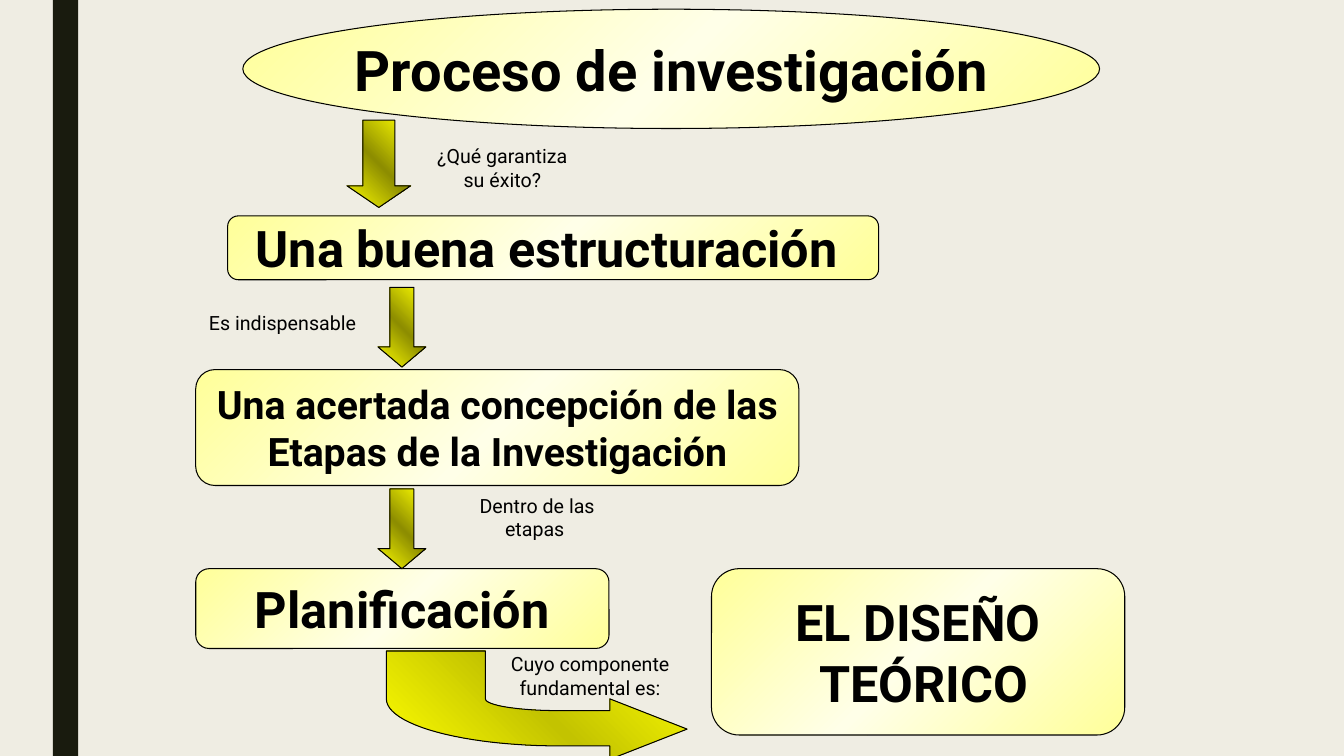
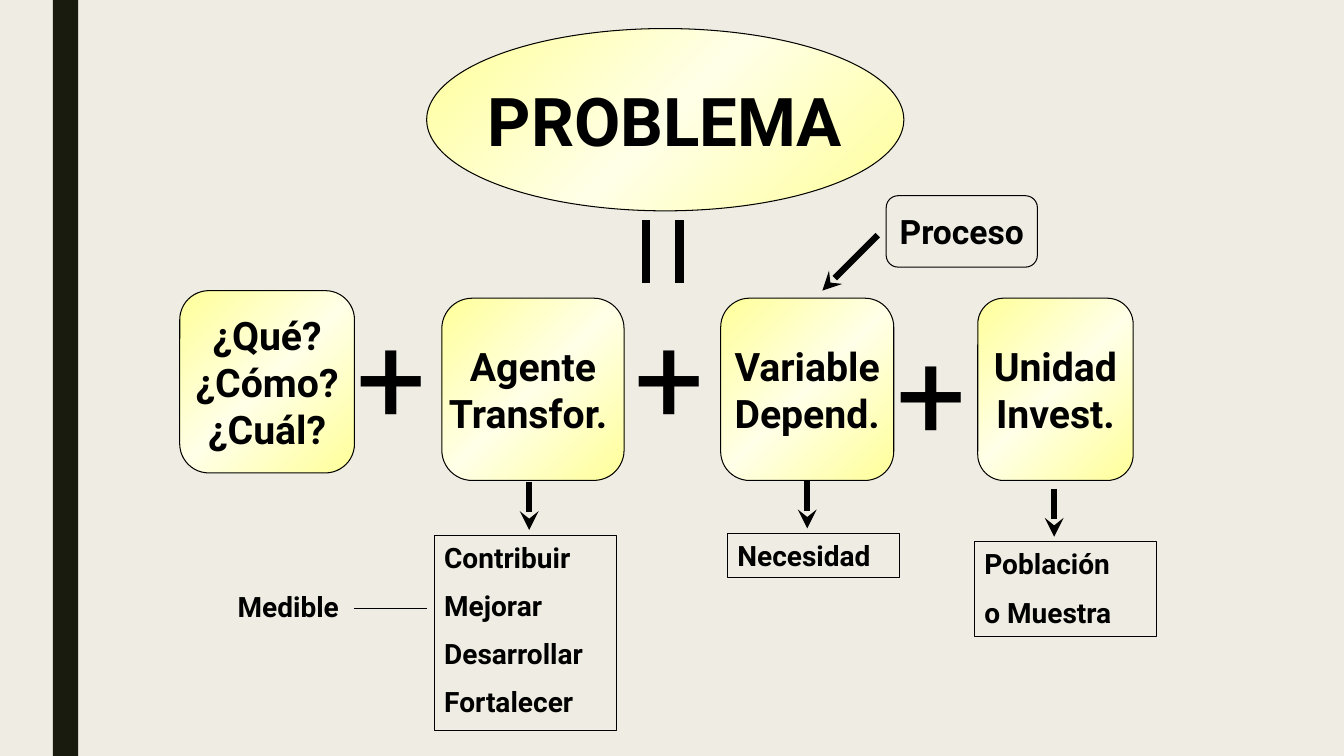
"""Build two concept maps about the research process and the research problem."""
from copy import deepcopy
from math import cos, pi, sin

from lxml import etree
from pptx import Presentation
from pptx.dml.color import RGBColor
from pptx.enum.shapes import MSO_CONNECTOR, MSO_SHAPE
from pptx.enum.text import MSO_ANCHOR, PP_ALIGN
from pptx.oxml.ns import qn
from pptx.util import Inches, Pt

STRAIGHT = MSO_CONNECTOR.STRAIGHT
ELLIPSE, ROUNDED = MSO_SHAPE.OVAL, MSO_SHAPE.ROUNDED_RECTANGLE
RECTANGLE, DOWN_ARROW = MSO_SHAPE.RECTANGLE, MSO_SHAPE.DOWN_ARROW
TOP, MIDDLE = MSO_ANCHOR.TOP, MSO_ANCHOR.MIDDLE
LEFT, CENTER = PP_ALIGN.LEFT, PP_ALIGN.CENTER

FONT = "Roboto"
COLORS = {"paper": "EFEDE3", "band": "191B0E", "ink": "000000", "cream": "FFFF99",
          "glow": "FFFFE8", "yellow": "FFFF00", "olive": "8D8D00", "moss": "C3C300"}
GRADIENTS = {"card": ("cream", "glow", 315), "arrow": ("yellow", "olive", 45),
             "bend": ("yellow", "moss", 45)}
COLUMNS, ROWS = 160, 90


def color(name):
    """Return the named colour."""
    return RGBColor.from_string(COLORS[name])


class Board:
    """Hold the deck's style and current slide, measured on a grid of columns and rows."""

    def __init__(self):
        """Start a widescreen deck with a plain background."""
        self.deck = Presentation()
        self.deck.slide_width, self.deck.slide_height = Inches(13.33), Inches(7.5)
        background = self.deck.slide_master.background.fill
        background.solid()
        background.fore_color.rgb = color("paper")
        self.shapes = None

    def x(self, column):
        """Convert columns to a length."""
        return round(self.deck.slide_width * column / COLUMNS)

    def y(self, row):
        """Convert rows to a length."""
        return round(self.deck.slide_height * row / ROWS)

    def place(self, at):
        """Convert left, top, width and height to lengths."""
        left, top, width, height = at
        return self.x(left), self.y(top), self.x(width), self.y(height)

    def page(self):
        """Add a blank page with the dark side band."""
        self.shapes = self.deck.slides.add_slide(self.deck.slide_layouts[6]).shapes
        band = self.shapes.add_shape(RECTANGLE, *self.place((6.3, 0, 3, ROWS)))
        band.shadow.inherit = False
        band.fill.solid()
        band.fill.fore_color.rgb = color("band")
        band.line.fill.background()

    def paint(self, shape, gradient=None):
        """Give a shape a thin outline and an optional mirrored gradient."""
        shape.shadow.inherit = False
        shape.line.color.rgb = color("ink")
        shape.line.width = Pt(0.75)
        if gradient is None:
            shape.fill.background()
            return
        edge, middle, angle = GRADIENTS[gradient]
        shape.fill.gradient()
        shape.fill.gradient_angle = angle
        stop_list = shape._element.spPr.find(".//" + qn("a:gsLst"))
        stop_list.append(deepcopy(stop_list[0]))
        for index, (stop, name) in enumerate(zip(shape.fill.gradient_stops, (edge, middle, edge))):
            stop.position = index / 2
            stop.color.rgb = color(name)

    def set_text(self, shape, lines, size, bold=True, align=CENTER, anchor=MIDDLE, wrap=False, gap=0):
        """Put one paragraph per line into a shape."""
        frame = shape.text_frame
        frame.word_wrap = wrap
        frame.vertical_anchor = anchor
        for index, line in enumerate(lines):
            para = frame.add_paragraph() if index else frame.paragraphs[0]
            para.alignment = align
            if index and gap:
                para.space_before = Pt(gap)
            span = para.add_run()
            span.text = line
            span.font.name, span.font.size, span.font.bold = FONT, Pt(size), bold
            span.font.color.rgb = color("ink")

    def card(self, at, lines, size, kind=ROUNDED, gradient="card", wrap=False):
        """Add an outlined shape with centred bold text."""
        box = self.shapes.add_shape(kind, *self.place(at))
        self.paint(box, gradient)
        self.set_text(box, lines, size, wrap=wrap)

    def examples(self, at, lines):
        """Add an outlined list of examples."""
        box = self.shapes.add_shape(RECTANGLE, *self.place(at))
        self.paint(box)
        self.set_text(box, lines, 20, align=LEFT, anchor=TOP, wrap=True, gap=10.5)

    def label(self, at, lines, size=14, **style):
        """Add free text."""
        box = self.shapes.add_textbox(*self.place(at))
        self.set_text(box, lines, size, **style)

    def down_arrow(self, at, head):
        """Add a block arrow pointing down."""
        arrow = self.shapes.add_shape(DOWN_ARROW, *self.place(at))
        arrow.adjustments[1] = head
        self.paint(arrow, "arrow")

    def bent_arrow(self, center, outer, inner, top, head):
        """Add a block arrow that curves from down to right around a centre."""
        def arc(radii, angles):
            return [(center[0] - radii[0] * cos(a), center[1] + radii[1] * sin(a)) for a in angles]

        quarter = [step * pi / 48 for step in range(25)]
        tip, neck, head_top, head_bottom = head
        outline = [tip, (neck, head_bottom), (neck, center[1] + outer[1])]
        outline += arc(outer, reversed(quarter))
        outline += [(center[0] - outer[0], top), (center[0] - inner[0], top)]
        outline += arc(inner, quarter)
        outline += [(neck, center[1] + inner[1]), (neck, head_top)]
        points = [(self.x(column), self.y(row)) for column, row in outline]
        builder = self.shapes.build_freeform(*points[0], scale=1.0)
        builder.add_line_segments(points[1:], close=True)
        self.paint(builder.convert_to_shape(), "bend")

    def line(self, start, end, width, pointed=False):
        """Add a straight line, with an arrowhead at its end if pointed."""
        line = self.shapes.add_connector(STRAIGHT, self.x(start[0]), self.y(start[1]),
                                         self.x(end[0]), self.y(end[1]))
        line.line.color.rgb = color("ink")
        line.line.width = Pt(width)
        properties = line._element.spPr
        if pointed:
            etree.SubElement(properties.find(qn("a:ln")), qn("a:tailEnd"), type="stealth")
        etree.SubElement(properties, qn("a:effectLst"))


def process_page(board):
    """Lay out the chain from the research process to the theoretical design."""
    board.page()
    board.card((28.9, 1.1, 102, 14.2), ["Proceso de investigación"], 40, ELLIPSE)
    board.card((27.1, 25.7, 77.5, 7.6), ["Una buena estructuración "], 36)
    board.card((23.3, 44, 71.8, 13.8),
               ["Una acertada concepción de las Etapas de la Investigación"], 28, wrap=True)
    board.card((23.3, 67.7, 49.2, 9.5), ["Planificación"], 36)
    board.card((84.7, 67.7, 49.2, 19.8), ["EL DISEÑO", " TEÓRICO"], 36)
    board.down_arrow((41.3, 14.3, 7.6, 10.4), 0.34)
    for top in (34.2, 58.2):
        board.down_arrow((45, top, 5.7, 9.5), 0.42)
    board.bent_arrow((66.6, 83.2), (20.6, 5.6), (8.8, 1.4), 77.5, ((81.8, 86.8), 72.6, 83.2, 90.4))
    for at, lines in (
        ((50.8, 15.7, 18, 8.5), ["¿Qué garantiza ", "su éxito?"]),
        ((22.3, 36.1, 22.7, 4.7), ["Es indispensable"]),
        ((52.6, 59.2, 22.7, 4.7), ["Dentro de las etapas "]),
        ((59.2, 78.1, 22.7, 4.7), ["Cuyo componente ", "fundamental es: "]),
    ):
        board.label(at, lines, bold=False)


def problem_page(board):
    """Lay out the problem as a sum of its parts."""
    board.page()
    board.card((50.8, 3.4, 56.8, 21.7), ["PROBLEMA"], 48, ELLIPSE)
    for column in (76.9, 80.9):
        board.line((column, 26.2), (column, 33.7), 6)
    for left, top, width, lines in (
        (21.4, 34.6, 20.8, ["¿Qué?", "¿Cómo?", "¿Cuál?"]),
        (52.6, 35.5, 21.7, ["Agente", "Transfor. "]),
        (85.8, 35.5, 20.6, ["Variable", "Depend."]),
        (116.4, 35.5, 18.5, ["Unidad", "Invest."]),
    ):
        board.card((left, top, width, 21.7), lines, 28)
    for left, top in ((41.3, 35.2), (74.3, 35.2), (105.5, 37.1)):
        board.label((left, top, 10.4, 18.8), ["+"], 88, bold=False, align=LEFT, anchor=TOP, wrap=True)
    for at, lines in (
        ((51.7, 63.7, 21.7, 23.3), ["Contribuir", "Mejorar", "Desarrollar", "Fortalecer"]),
        ((86.6, 63.5, 20.5, 5.3), ["Necesidad"]),
        ((116, 64.5, 21.7, 11.3), ["Población", "o Muestra"]),
    ):
        board.examples(at, lines)
    for column, top in ((63, 57.4), (96.1, 57.2), (125.5, 58.2)):
        board.line((column, top), (column, top + 5.7), 4.5, pointed=True)
    board.label((27.1, 69.6, 15.1, 5.2), ["Medible"], 20, align=LEFT, anchor=TOP, wrap=True)
    board.line((42.2, 72.4), (50.8, 72.4), 0.75)
    board.card((105.5, 23.3, 18, 8.5), ["Proceso"], 24, gradient=None)
    board.line((104.5, 28), (97.9, 34.6), 4.5, pointed=True)


def main():
    """Build and save the deck."""
    board = Board()
    process_page(board)
    problem_page(board)
    board.deck.save("out.pptx")


if __name__ == "__main__":
    main()
